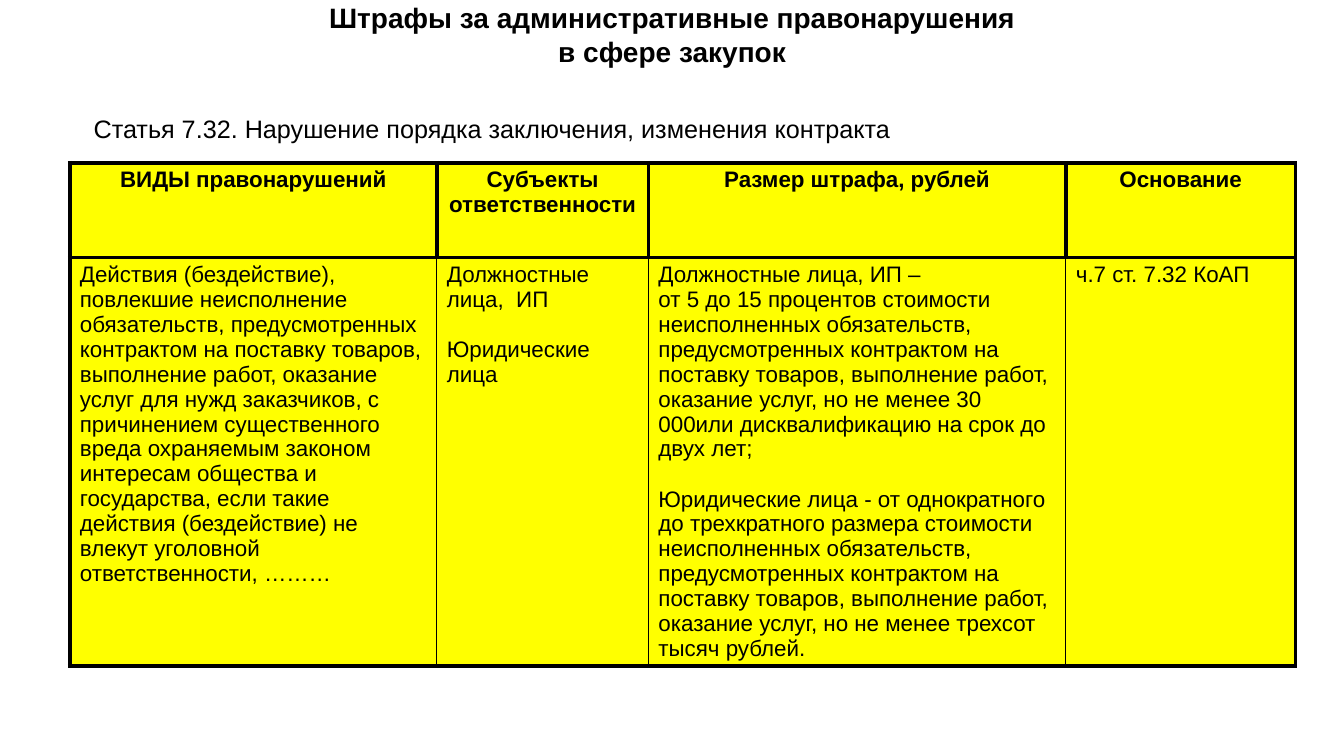
from lxml.etree import SubElement
from pptx import Presentation
from pptx.dml.color import RGBColor
from pptx.enum.text import MSO_ANCHOR as Anchor, PP_ALIGN as Align
from pptx.oxml.ns import qn
from pptx.util import Cm, Pt

HEADING = "Штрафы за административные правонарушения\vв сфере закупок"
ARTICLE = "Статья 7.32. Нарушение порядка заключения, изменения контракта"
HEADERS = [
    "ВИДЫ правонарушений",
    "Субъекты ответственности",
    "Размер штрафа, рублей",
    "Основание",
]
OFFENCE = [
    "Действия (бездействие), повлекшие неисполнение обязательств, "
    "предусмотренных контрактом на поставку товаров, выполнение работ, "
    "оказание услуг для нужд заказчиков, с причинением существенного вреда "
    "охраняемым законом интересам общества и государства, если такие действия "
    "(бездействие) не влекут уголовной ответственности, ………",
]
SUBJECTS = ["Должностные лица,  ИП", "Юридические лица"]
FINES = [
    "Должностные лица, ИП –\vот 5 до 15 процентов стоимости неисполненных "
    "обязательств, предусмотренных контрактом на поставку товаров, выполнение "
    "работ, оказание услуг, но не менее 30 000или дисквалификацию на срок до "
    "двух лет;",
    "Юридические лица - от однократного до трехкратного размера стоимости "
    "неисполненных обязательств, предусмотренных контрактом на поставку "
    "товаров, выполнение работ, оказание услуг, но не менее трехсот тысяч "
    "рублей.",
]
GROUNDS = ["ч.7 ст. 7.32 КоАП"]
ROWS = [[[header] for header in HEADERS], [OFFENCE, SUBJECTS, FINES, GROUNDS]]

COLUMN_WIDTHS = [9.25, 5.33, 10.52, 5.79]
ROW_HEIGHTS = [2.39, 10.26]
THICK, THIN = 3, 1
BLACK = RGBColor(0, 0, 0)
YELLOW = RGBColor(255, 255, 0)
WHITE = RGBColor(255, 255, 255)


def write(frame, paragraphs, size=16, bold=False, align=Align.LEFT, gap=0):
    """Fill a text frame with formatted paragraphs, gap points apart."""
    for index, text in enumerate(paragraphs):
        paragraph = frame.paragraphs[0] if index == 0 else frame.add_paragraph()
        paragraph.text = text
        paragraph.alignment = align
        paragraph.space_before = Pt(gap if index else 0)
        for run in paragraph.runs:
            run.font.name = "Arial"
            run.font.size = Pt(size)
            run.font.bold = bold
            run.font.color.rgb = BLACK


def draw_borders(cell, widths):
    """Draw the left, right, top and bottom borders of a cell."""
    properties = cell._tc.get_or_add_tcPr()
    for position, (side, width) in enumerate(zip("LRTB", widths)):
        line = SubElement(properties, qn(f"a:ln{side}"), w=str(Pt(width)))
        fill = SubElement(line, qn("a:solidFill"))
        SubElement(fill, qn("a:srgbClr"), val=str(BLACK))
        properties.insert(position, line)


def add_fines_table(slide):
    """Add the table of offences, subjects, fines and grounds."""
    last = len(COLUMN_WIDTHS) - 1
    table = slide.shapes.add_table(
        len(ROWS), len(COLUMN_WIDTHS), Cm(1.76), Cm(4.1),
        Cm(sum(COLUMN_WIDTHS)), Cm(sum(ROW_HEIGHTS)),
    ).table
    for column, width in zip(table.columns, COLUMN_WIDTHS):
        column.width = Cm(width)
    for row, height in zip(table.rows, ROW_HEIGHTS):
        row.height = Cm(height)
    for r, entries in enumerate(ROWS):
        is_header = r == 0
        inner = THICK if is_header else THIN
        for c, paragraphs in enumerate(entries):
            cell = table.cell(r, c)
            cell.fill.solid()
            cell.fill.fore_color.rgb = YELLOW
            left = THICK if c == 0 else inner
            right = THICK if c == last else inner
            draw_borders(cell, (left, right, THICK, THICK))
            write(cell.text_frame, paragraphs, bold=is_header, gap=18,
                  align=Align.CENTER if is_header else Align.LEFT)


def main():
    """Build the slide on fines for procurement offences."""
    deck = Presentation()
    deck.slide_width, deck.slide_height = Cm(33.87), Cm(19.05)
    slide = deck.slides.add_slide(deck.slide_layouts[5])
    slide.background.fill.solid()
    slide.background.fill.fore_color.rgb = WHITE

    heading = slide.shapes.title
    heading.left, heading.top = Cm(5.51), Cm(0)
    heading.width, heading.height = Cm(22.86), Cm(1.73)
    heading.text_frame.vertical_anchor = Anchor.MIDDLE
    write(heading.text_frame, [HEADING], size=20, bold=True, align=Align.CENTER)

    add_fines_table(slide)

    article = slide.shapes.add_textbox(Cm(2.11), Cm(2.72), Cm(30.18), Cm(1.02))
    article.text_frame.word_wrap = True
    write(article.text_frame, [ARTICLE], size=18)

    deck.save("out.pptx")


if __name__ == "__main__":
    main()
